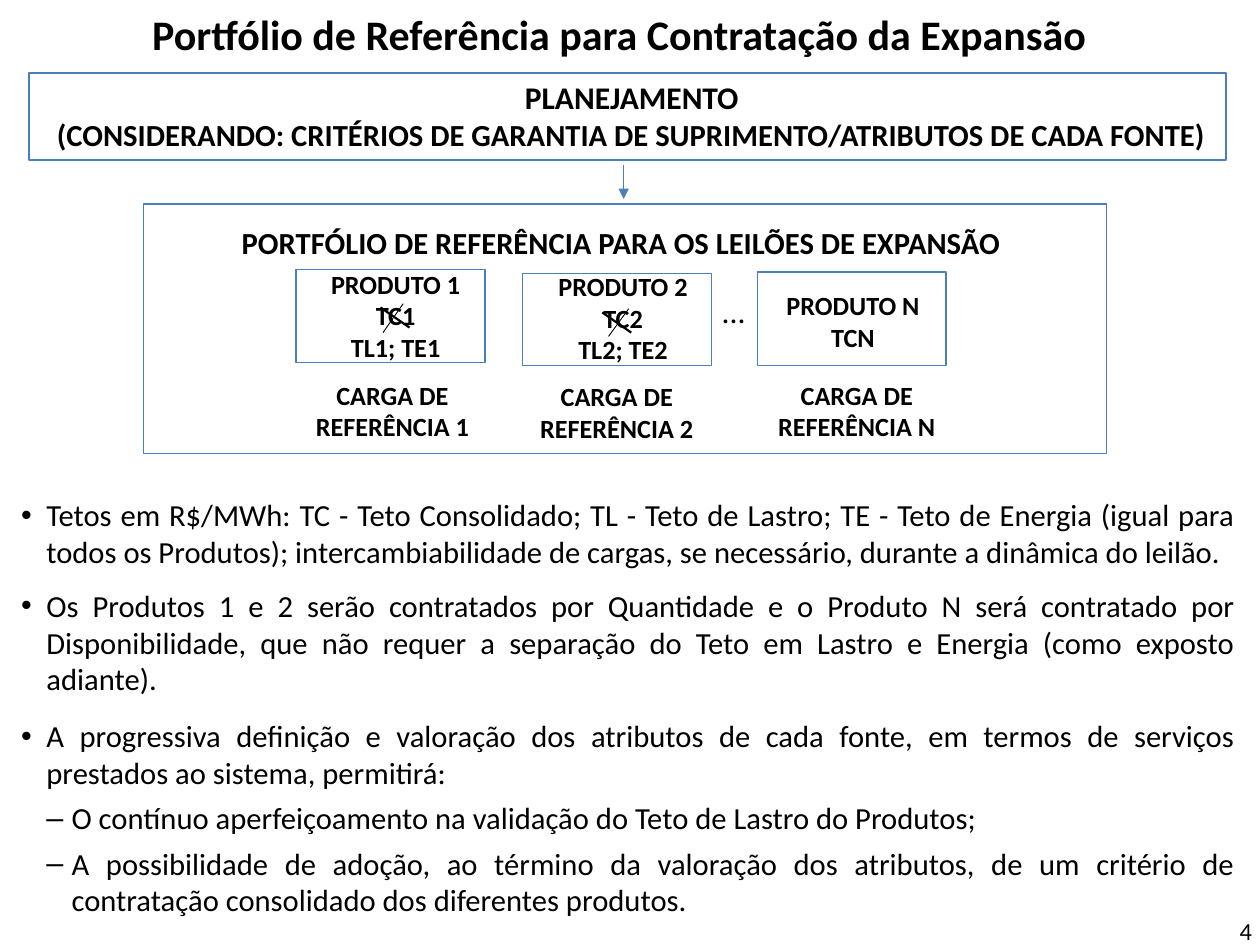
from dataclasses import dataclass

from lxml import etree
from pptx import Presentation
from pptx.dml.color import RGBColor
from pptx.enum.shapes import MSO_CONNECTOR, MSO_SHAPE
from pptx.enum.text import MSO_AUTO_SIZE, PP_ALIGN
from pptx.oxml.ns import qn
from pptx.util import Emu, Pt

RECT = MSO_SHAPE.RECTANGLE
STRAIGHT = MSO_CONNECTOR.STRAIGHT
GROW = MSO_AUTO_SIZE.SHAPE_TO_FIT_TEXT
LEFT, CENTER, JUSTIFY = PP_ALIGN.LEFT, PP_ALIGN.CENTER, PP_ALIGN.JUSTIFY
PX = 9144  # EMU per px, 100 px to the inch

Box = tuple[int, int, int, int]


@dataclass(frozen=True)
class Theme:
    font: str = "Calibri"
    text: RGBColor = RGBColor(0, 0, 0)
    border: RGBColor = RGBColor(0x4B, 0x7E, 0xBC)
    title: float = 24
    head: float = 18
    body: float = 17.5
    label: float = 15
    number: float = 14
    thin: float = 0.5
    rule: float = 0.75
    thick: float = 1.25


@dataclass(frozen=True)
class Product:
    frame: Box
    label_box: Box
    lines: list[str]
    load_box: Box
    load: str


@dataclass(frozen=True)
class Line:
    start: tuple[int, int]
    end: tuple[int, int]
    width: float
    color: RGBColor
    arrow: bool = False


@dataclass(frozen=True)
class Bullet:
    text: str
    level: int = 0
    before: float = 0


T = Theme()

PRODUCTS = [
    Product((235, 214, 150, 74), (238, 208, 152, 86),
            ["PRODUTO 1", "TC1", "TL1; TE1"],
            (235, 296, 153, 61), "CARGA DE REFERÊNCIA 1"),
    Product((415, 217, 150, 73), (425, 210, 139, 86),
            ["PRODUTO 2", "TC2", "TL2; TE2"],
            (415, 297, 149, 61), "CARGA DE REFERÊNCIA 2"),
    Product((601, 216, 150, 74), (612, 225, 130, 61),
            ["PRODUTO N", "TCN"],
            (605, 296, 150, 61), "CARGA DE REFERÊNCIA N"),
]

LINES = [
    Line((495, 131), (495, 158), T.rule, T.border, arrow=True),
    # Strokes crossing out TC1 and TC2
    Line((302, 244), (325, 260), T.thick, T.text),
    Line((320, 241), (304, 264), T.thin, T.text),
    Line((478, 248), (501, 264), T.thick, T.text),
    Line((499, 245), (483, 267), T.thin, T.text),
]

BULLETS = [
    Bullet("Tetos em R$/MWh: TC - Teto Consolidado; TL - Teto de Lastro; "
           "TE - Teto de Energia (igual para todos os Produtos); "
           "intercambiabilidade de cargas, se necessário, durante a dinâmica do leilão."),
    Bullet("Os Produtos 1 e 2 serão contratados por Quantidade e o Produto N será "
           "contratado por Disponibilidade, que não requer a separação do Teto em "
           "Lastro e Energia (como exposto adiante).", before=9.8),
    Bullet("A progressiva definição e valoração dos atributos de cada fonte, em termos "
           "de serviços prestados ao sistema, permitirá:", before=11.6),
    Bullet("O contínuo aperfeiçoamento na validação do Teto de Lastro do Produtos;",
           level=1, before=4.9),
    Bullet("A possibilidade de adoção, ao término da valoração dos atributos, de um "
           "critério de contratação consolidado dos diferentes produtos.",
           level=1, before=4.9),
]


def emu(*values: int) -> list[Emu]:
    return [Emu(v * PX) for v in values]


def format_font(p, size: float, bold: bool) -> None:
    values = {"name": T.font, "size": Pt(size), "bold": bold}
    for r in p.runs:
        for key, value in values.items():
            setattr(r.font, key, value)
        r.font.color.rgb = T.text


def add_frame(s, box: Box) -> None:
    sp = s.shapes.add_shape(RECT, *emu(*box))
    sp.shadow.inherit = False
    sp.fill.background()
    sp.line.color.rgb = T.border
    sp.line.width = Pt(T.rule)


def add_line(s, line: Line) -> None:
    sp = s.shapes.add_connector(STRAIGHT, *emu(*line.start, *line.end))
    sp.line.color.rgb = line.color
    sp.line.width = Pt(line.width)
    if line.arrow:
        etree.SubElement(sp.line._get_or_add_ln(), qn("a:tailEnd"), type="triangle")
    etree.SubElement(sp._element.spPr, qn("a:effectLst"))


def new_text_frame(s, box: Box):
    tf = s.shapes.add_textbox(*emu(*box)).text_frame
    tf.word_wrap = True
    tf.auto_size = GROW
    return tf


def add_text(s, box: Box, lines: list[str], sizes: list[float],
             bold: bool = True, align=CENTER) -> None:
    tf = new_text_frame(s, box)
    for i, (text, size) in enumerate(zip(lines, sizes)):
        p = tf.paragraphs[0] if i == 0 else tf.add_paragraph()
        p.add_run().text = text
        p.alignment = align
        format_font(p, size, bold)


def add_bullets(s, box: Box, bullets: list[Bullet]) -> None:
    tf = new_text_frame(s, box)
    step = Emu(20 * PX)
    for i, bullet in enumerate(bullets):
        p = tf.paragraphs[0] if i == 0 else tf.add_paragraph()
        p.alignment = JUSTIFY
        if bullet.before:
            p.space_before = Pt(bullet.before)
        pPr = p._p.get_or_add_pPr()
        pPr.set("marL", str(step * (bullet.level + 1)))
        pPr.set("indent", str(-step))
        etree.SubElement(pPr, qn("a:buFont"), typeface="Arial")
        etree.SubElement(pPr, qn("a:buChar"), char="•–"[bullet.level])
        p.add_run().text = bullet.text
        format_font(p, T.body, False)


def main() -> None:
    prs = Presentation()
    prs.slide_width, prs.slide_height = emu(1000, 750)
    s = prs.slides.add_slide(prs.slide_layouts[6])

    # Title and planning box
    add_text(s, (35, 2, 913, 50),
             ["Portfólio de Referência para Contratação da Expansão"], [T.title])
    add_frame(s, (23, 58, 950, 69))
    add_text(s, (30, 57, 943, 70),
             ["PLANEJAMENTO",
              "(CONSIDERANDO: CRITÉRIOS DE GARANTIA DE SUPRIMENTO/ATRIBUTOS DE CADA FONTE)"],
             [T.head, T.body])

    # Reference portfolio with its products
    add_frame(s, (114, 162, 764, 198))
    add_text(s, (169, 173, 654, 40),
             ["PORTFÓLIO DE REFERÊNCIA PARA OS LEILÕES DE EXPANSÃO "], [T.body])
    for product in PRODUCTS:
        add_frame(s, product.frame)
        add_text(s, product.label_box, product.lines, [T.label] * len(product.lines))
        add_text(s, product.load_box, [product.load], [T.label])
    add_text(s, (563, 227, 53, 40), ["..."], [T.head], bold=False, align=LEFT)

    # Arrow and cross-out strokes
    for line in LINES:
        add_line(s, line)

    # Explanations and page number
    add_bullets(s, (7, 389, 984, 380), BULLETS)
    add_text(s, (974, 722, 26, 34), ["4"], [T.number], bold=False, align=LEFT)

    prs.save("out.pptx")


if __name__ == "__main__":
    main()
